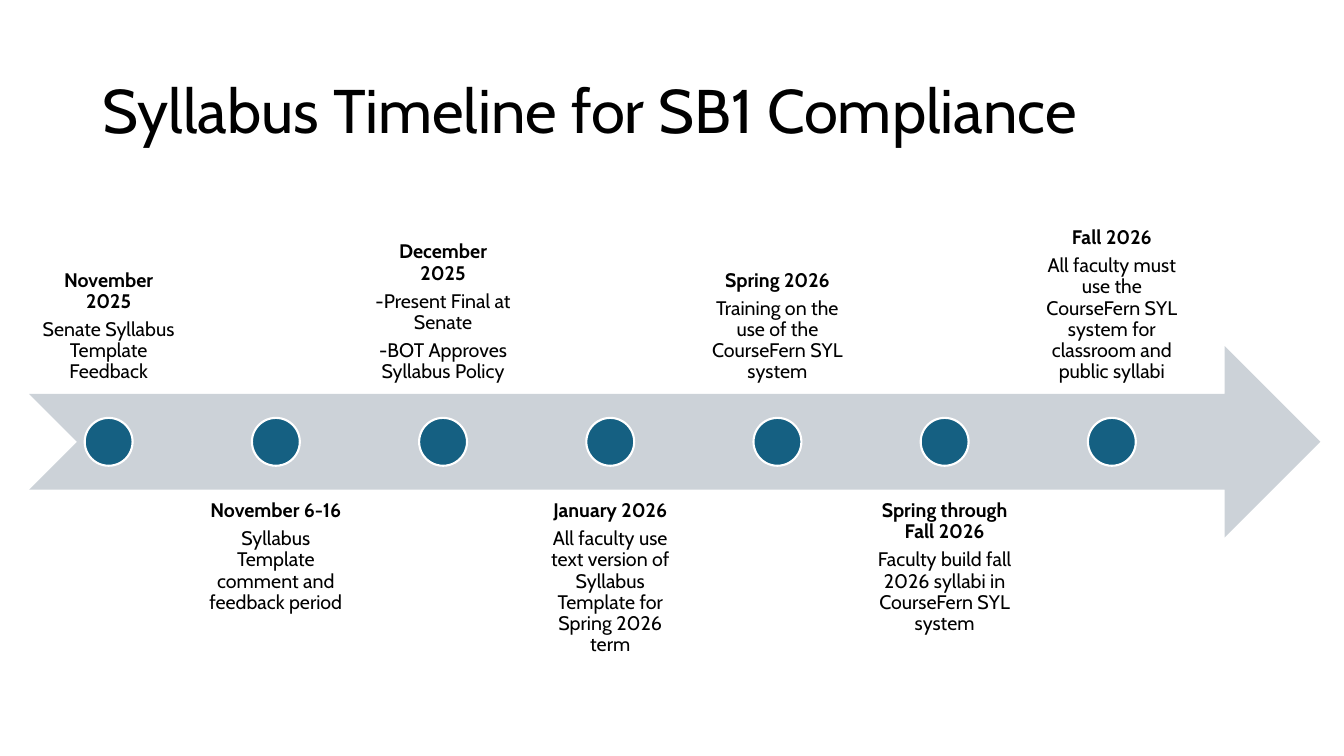
import pptx
import pptx.dml.color
import pptx.enum.shapes
import pptx.enum.text
import pptx.util

Pt = pptx.util.Pt
SHAPE = pptx.enum.shapes.MSO_SHAPE
ALIGN = pptx.enum.text.PP_ALIGN
ANCHOR = pptx.enum.text.MSO_ANCHOR

FONT = "Cabin"
AXIS_Y = 315.6
ARROW_LEFT, ARROW_WIDTH, ARROW_HEIGHT = 20.8, 922.4, 136.8
BAND_HALF = ARROW_HEIGHT / 4
FIRST_X, STEP = 77.6, 119.43
DOT = 34.2
LABEL_WIDTH, LABEL_HEIGHT = 113.8, 136.8

MILESTONES = [
    ("November 2025", ["Senate Syllabus Template Feedback"]),
    ("November 6-16", ["Syllabus Template comment and feedback period"]),
    ("December 2025", ["-Present Final at Senate",
                       "-BOT Approves Syllabus Policy"]),
    ("January 2026", ["All faculty use text version of Syllabus Template "
                      "for Spring 2026 term"]),
    ("Spring 2026", ["Training on the use of the CourseFern SYL system"]),
    ("Spring through Fall 2026", ["Faculty build fall 2026 syllabi in "
                                  "CourseFern SYL system"]),
    ("Fall 2026", ["All faculty must use the CourseFern SYL system for "
                   "classroom and public syllabi"]),
]


def rgb(value):
    return pptx.dml.color.RGBColor.from_string(value)


def set_attrs(obj, values):
    for name, value in values.items():
        setattr(obj, name, value)


def write_paragraph(p, text, size, bold=False, **layout):
    set_attrs(p, {"line_spacing": 0.9, **layout})
    r = p.add_run()
    r.text = text
    set_attrs(r.font, {"name": FONT, "size": Pt(size), "bold": bold})
    r.font.color.rgb = rgb("000000")


def add_title(s, text):
    sp = s.shapes.title
    set_attrs(sp, {"left": Pt(66), "top": Pt(28.8),
                   "width": Pt(828), "height": Pt(104.4)})
    tf = sp.text_frame
    set_attrs(tf, {"word_wrap": True, "vertical_anchor": ANCHOR.MIDDLE,
                   "auto_size": pptx.enum.text.MSO_AUTO_SIZE.NONE})
    write_paragraph(tf.paragraphs[0], text, 44, alignment=ALIGN.LEFT)


def add_filled(s, kind, x, y, w, h, fill, line=None):
    sp = s.shapes.add_shape(kind, Pt(x), Pt(y), Pt(w), Pt(h))
    sp.shadow.inherit = False
    sp.fill.solid()
    sp.fill.fore_color.rgb = rgb(fill)
    if line:
        sp.line.color.rgb = rgb(line)
        sp.line.width = Pt(1.5)
    else:
        sp.line.fill.background()


def add_label(s, center_x, above, heading, details):
    """Place a milestone's text against the upper or lower edge of the arrow band."""
    y = AXIS_Y - BAND_HALF - LABEL_HEIGHT if above else AXIS_Y + BAND_HALF
    sp = s.shapes.add_textbox(Pt(center_x - LABEL_WIDTH / 2), Pt(y),
                              Pt(LABEL_WIDTH), Pt(LABEL_HEIGHT))
    tf = sp.text_frame
    set_attrs(tf, {"word_wrap": True,
                   "vertical_anchor": ANCHOR.BOTTOM if above else ANCHOR.TOP})
    for side in ("left", "top", "right", "bottom"):
        setattr(tf, f"margin_{side}", Pt(7.84))
    for i, text in enumerate([heading, *details]):
        p = tf.add_paragraph() if i else tf.paragraphs[0]
        write_paragraph(p, text, 14, bold=i == 0, alignment=ALIGN.CENTER,
                        space_before=Pt(0), space_after=Pt(4.9))


def main():
    prs = pptx.Presentation()
    set_attrs(prs, {"slide_width": Pt(960), "slide_height": Pt(540)})
    s = prs.slides.add_slide(prs.slide_layouts[5])
    add_title(s, "Syllabus Timeline for SB1 Compliance")
    add_filled(s, SHAPE.NOTCHED_RIGHT_ARROW, ARROW_LEFT,
               AXIS_Y - ARROW_HEIGHT / 2, ARROW_WIDTH, ARROW_HEIGHT, "CCD2D8")
    for i, (heading, details) in enumerate(MILESTONES):
        x = FIRST_X + i * STEP
        add_label(s, x, i % 2 == 0, heading, details)
        add_filled(s, SHAPE.OVAL, x - DOT / 2, AXIS_Y - DOT / 2, DOT, DOT,
                   "156082", "FFFFFF")
    prs.save("out.pptx")


if __name__ == "__main__":
    main()
